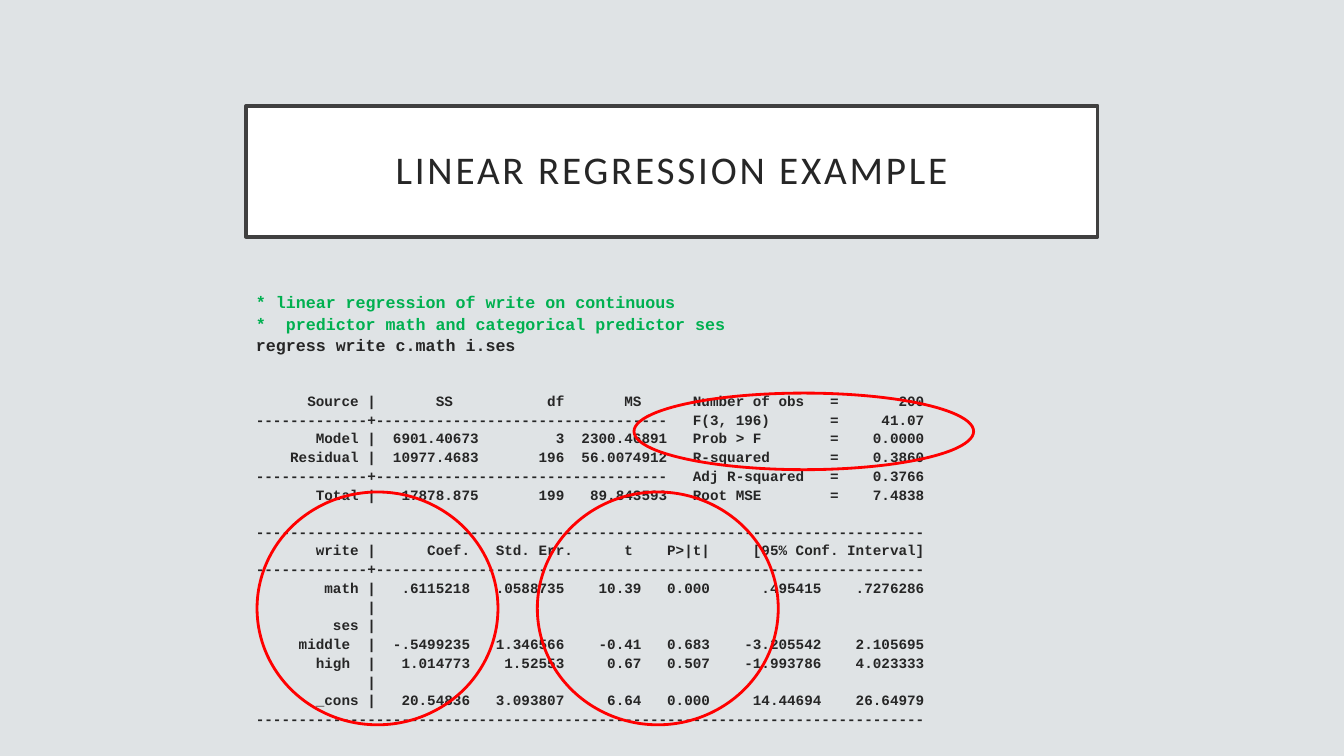
from pptx import Presentation
from pptx.util import Pt
from pptx.dml.color import RGBColor as RGB
from pptx.enum.shapes import MSO_SHAPE as SHAPE
from pptx.enum.text import MSO_ANCHOR as ANCHOR, PP_ALIGN as ALIGN

COLORS = {"back": "DFE3E5", "panel": "FFFFFF", "frame": "404040",
          "ink": "262626", "comment": "00B050", "ring": "FF0000"}
COMMAND = """\
* linear regression of write on continuous
*  predictor math and categorical predictor ses
regress write c.math i.ses"""
FIT = """\
      Source |       SS           df       MS      Number of obs   =       200
-------------+----------------------------------   F(3, 196)       =     41.07
       Model |  6901.40673         3  2300.46891   Prob > F        =    0.0000
    Residual |  10977.4683       196  56.0074912   R-squared       =    0.3860
-------------+----------------------------------   Adj R-squared   =    0.3766
       Total |   17878.875       199   89.843593   Root MSE        =    7.4838"""
COEFFICIENTS = """\
------------------------------------------------------------------------------
       write |      Coef.   Std. Err.      t    P>|t|     [95% Conf. Interval]
-------------+----------------------------------------------------------------
        math |   .6115218   .0588735    10.39   0.000      .495415    .7276286
             |
         ses |
     middle  |  -.5499235   1.346566    -0.41   0.683    -3.205542    2.105695
       high  |   1.014773    1.52553     0.67   0.507    -1.993786    4.023333
             |
       _cons |   20.54836   3.093807     6.64   0.000     14.44694    26.64979
------------------------------------------------------------------------------"""
BLOCKS = [(COMMAND, 11.9, 3), (FIT, 10.2, 28.64), (COEFFICIENTS, 10.2, 15.82)]
RINGS = [(183.6, 351.4, 172.1, 166.3), (383.8, 351.4, 172.1, 166.3),
         (452.9, 280.8, 242.6, 54.7)]


class Deck:
    """Draws styled elements on the current slide."""

    def __init__(self, prs):
        self.s = prs.slides.add_slide(prs.slide_layouts[6])
        fill = self.s.background.fill
        fill.solid()
        fill.fore_color.rgb = self.color("back")

    def color(self, name):
        return RGB.from_string(COLORS[name])

    def apply(self, target, values):
        for name, value in values.items():
            setattr(target, name, value)

    def shape(self, kind, box, line, width, fill=None):
        sp = self.s.shapes.add_shape(kind, *map(Pt, box))
        sp.shadow.inherit = False
        if fill:
            sp.fill.solid()
            sp.fill.fore_color.rgb = self.color(fill)
        else:
            sp.fill.background()
        sp.line.color.rgb = self.color(line)
        sp.line.width = Pt(width)
        return sp

    def add_text(self, p, text, color, font, layout):
        r = p.add_run()
        r.text = text
        r.font.color.rgb = self.color(color)
        self.apply(r.font, font)
        self.apply(p, layout)
        return r

    def title(self, text, box):
        sp = self.shape(SHAPE.RECTANGLE, box, "frame", 2.5, "panel")
        tf = sp.text_frame
        self.apply(tf, {"word_wrap": True, "vertical_anchor": ANCHOR.MIDDLE,
                        "margin_left": Pt(14.4), "margin_right": Pt(14.4),
                        "margin_top": Pt(14.4), "margin_bottom": Pt(14.4)})
        r = self.add_text(tf.paragraphs[0], text, "ink",
                          {"name": "Calibri", "size": Pt(28)},
                          {"alignment": ALIGN.CENTER, "line_spacing": 0.9})
        r.font._element.set("spc", "200")

    def listing(self, blocks, box):
        tf = self.s.shapes.add_textbox(*map(Pt, box)).text_frame
        tf.word_wrap = True
        p = tf.paragraphs[0]
        for text, size, gap in blocks:
            for i, line in enumerate(text.splitlines()):
                if p is None:
                    p = tf.add_paragraph()
                self.add_text(p, line, "comment" if line.startswith("*") else "ink",
                              {"name": "Courier New", "size": Pt(size), "bold": True},
                              {"line_spacing": 0.85, "space_before": Pt(3 if i else gap)})
                p = None

    def ring(self, box):
        self.shape(SHAPE.OVAL, box, "ring", 2)


def main():
    prs = Presentation()
    prs.slide_width, prs.slide_height = Pt(960), Pt(540)
    deck = Deck(prs)
    deck.title("LINEAR REGRESSION EXAMPLE", (175.7, 75.6, 608.4, 93.6))
    deck.listing(BLOCKS, (175.7, 207.4, 655.9, 316.1))
    for box in RINGS:
        deck.ring(box)
    prs.save("out.pptx")


if __name__ == "__main__":
    main()
